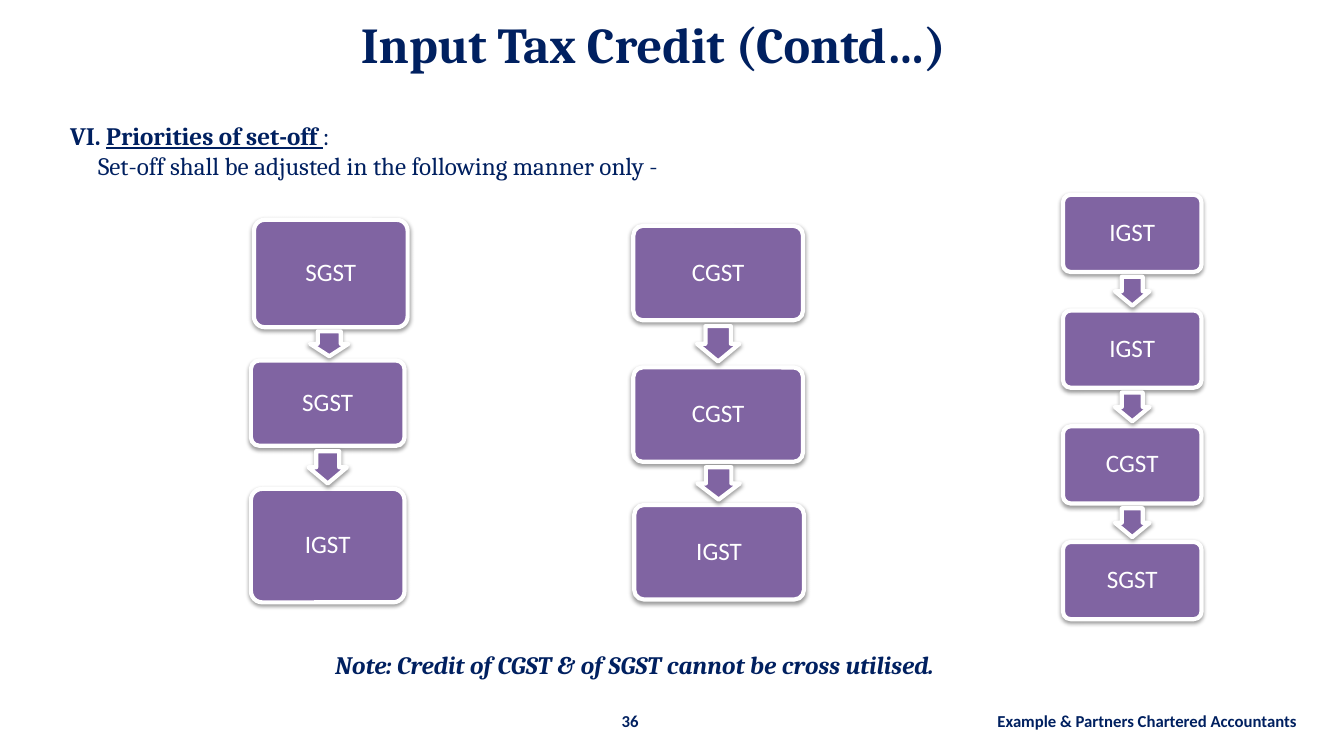
"""Builds the input tax credit slide with its three set-off sequences."""
from lxml import etree
from pptx import Presentation
from pptx.dml.color import RGBColor as RGB
from pptx.enum.shapes import MSO_SHAPE as SHAPE
from pptx.enum.text import MSO_ANCHOR as ANCHOR, PP_ALIGN as ALIGN
from pptx.oxml.ns import qn
from pptx.util import Pt

TITLE = "Input Tax Credit (Contd…)"
HEADING = [("VI. ", True, False), ("Priorities of set-off ", True, True), (":", False, False)]
LEAD = "Set-off shall be adjusted in the following manner only -"
NOTE = "Note: Credit of CGST & of SGST cannot be cross utilised."
PAGE = "36"
FIRM = "Example & Partners Chartered Accountants"

SEQUENCES = [
    {"width": 110.2, "taxes": [("SGST", 182.2, 157.7, 77), ("SGST", 180, 258.5, 61.2),
                               ("IGST", 180, 350.6, 81.4)]},
    {"width": 121.7, "taxes": [("CGST", 454.3, 162, 67.7), ("CGST", 454.3, 263.5, 67.7),
                               ("IGST", 455, 362.2, 67.7)]},
    {"width": 99.4, "taxes": [(tax, 762.5, 139.7 + 83 * step, 55.4)
                              for step, tax in enumerate(["IGST", "IGST", "CGST", "SGST"])]},
]

THEME = {
    "navy": RGB.from_string("002060"), "purple": RGB.from_string("8064A2"),
    "white": RGB.from_string("FFFFFF"), "shadow": "000000",
    "serif": "Cambria", "sans": "Calibri",
    "title": 36, "body": 18, "footer": 12, "outline": 3, "lead_indent": 20,
}
ARROW_LENGTH, ARROW_WIDTH = 0.75, 0.45


def style(run, size, face="serif", color="navy", bold=False, italic=False, underline=False):
    font = run.font
    font.size, font.name, font.color.rgb = Pt(THEME[size]), THEME[face], THEME[color]
    font.bold, font.italic, font.underline = bold, italic, underline


def add_text(slide, box, text, align, size, **look):
    frame = slide.shapes.add_textbox(*map(Pt, box)).text_frame
    frame.word_wrap = True
    frame.text = text
    line = frame.paragraphs[0]
    line.alignment = align
    for run in line.runs:
        style(run, size, **look)
    return frame


def add_block(slide, kind, box, adjustments):
    block = slide.shapes.add_shape(kind, *map(Pt, box))
    for index, value in enumerate(adjustments):
        block.adjustments[index] = value
    block.fill.solid()
    block.fill.fore_color.rgb = THEME["purple"]
    block.line.color.rgb = THEME["white"]
    block.line.width = Pt(THEME["outline"])
    block.shadow.inherit = False
    effects = block.element.spPr.find(qn("a:effectLst"))
    shadow = etree.SubElement(effects, qn("a:outerShdw"), blurRad=str(Pt(3.1)),
                              dist=str(Pt(1.6)), dir="5400000", rotWithShape="0")
    color = etree.SubElement(shadow, qn("a:srgbClr"), val=THEME["shadow"])
    etree.SubElement(color, qn("a:alpha"), val="38000")
    return block


def add_tax(slide, tax, box):
    frame = add_block(slide, SHAPE.ROUNDED_RECTANGLE, box, [0.1]).text_frame
    frame.text = tax
    frame.vertical_anchor = ANCHOR.MIDDLE
    label = frame.paragraphs[0]
    label.alignment, label.line_spacing = ALIGN.CENTER, 0.9
    style(label.runs[0], "body", "sans", "white")


def add_sequence(slide, width, taxes):
    arrow_width = ARROW_WIDTH * min(height for *_, height in taxes)
    for tax, left, top, height in taxes:
        add_tax(slide, tax, (left, top, width, height))
    for (_, left, top, height), (_, next_left, next_top, _) in zip(taxes, taxes[1:]):
        gap = next_top - top - height
        length = ARROW_LENGTH * gap
        center = (left + next_left + width) / 2
        box = (center - arrow_width / 2, top + height + (gap - length) / 2, arrow_width, length)
        add_block(slide, SHAPE.DOWN_ARROW, box, [0.6, 0.5])


def add_heading(slide):
    frame = add_text(slide, (43.2, 82.8, 863.3, 51), "", ALIGN.LEFT, "body")
    for words, bold, underline in HEADING:
        run = frame.paragraphs[0].add_run()
        run.text = words
        style(run, "body", bold=bold, underline=underline)
    lead = frame.add_paragraph()
    lead.text = LEAD
    lead._p.get_or_add_pPr().set("marL", str(Pt(THEME["lead_indent"])))
    style(lead.runs[0], "body")


def main():
    deck = Presentation()
    deck.slide_width, deck.slide_height = Pt(964.08), Pt(540)
    slide = deck.slides.add_slide(deck.slide_layouts[6])
    for sequence in SEQUENCES:
        add_sequence(slide, **sequence)
    add_text(slide, (30.2, 5.8, 877, 51), TITLE, ALIGN.CENTER, "title", bold=True)
    add_heading(slide)
    add_text(slide, (438.8, 506.2, 60, 22), PAGE, ALIGN.LEFT, "footer", face="sans", bold=True)
    add_text(slide, (637.4, 506.2, 300, 22), FIRM, ALIGN.RIGHT, "footer", face="sans", bold=True)
    add_text(slide, (146.2, 462.2, 617.8, 30), NOTE, ALIGN.CENTER, "body", bold=True, italic=True)
    deck.save("out.pptx")


if __name__ == "__main__":
    main()
